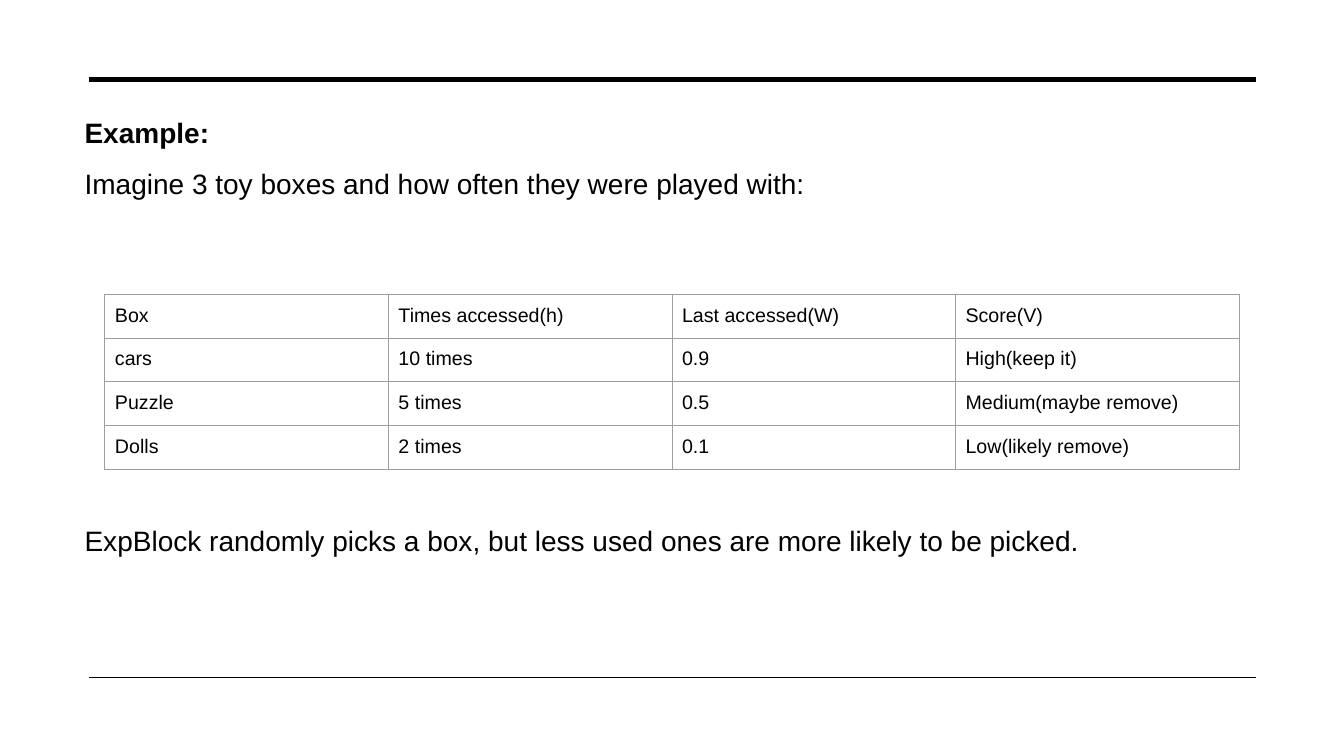
from lxml.etree import SubElement
from pptx import Presentation
from pptx.dml.color import RGBColor
from pptx.enum.shapes import MSO_CONNECTOR
from pptx.enum.text import MSO_ANCHOR
from pptx.oxml.ns import qn
from pptx.util import Inches, Pt


class ExampleSlide:
    COLORS = {"ink": "000000", "grid": "9E9E9E"}
    FONT = "Arial"

    def __init__(self, presentation):
        self.slide = presentation.slides.add_slide(presentation.slide_layouts[6])

    def color(self, name):
        return RGBColor.from_string(self.COLORS[name])

    def styled_run(self, paragraph, text, size, bold=False):
        run = paragraph.add_run()
        run.text = text
        run.font.name = self.FONT
        run.font.size = Pt(size)
        run.font.bold = bold
        run.font.color.rgb = self.color("ink")

    def rule(self, left, right, y, weight):
        line = self.slide.shapes.add_connector(
            MSO_CONNECTOR.STRAIGHT, Inches(left), Inches(y), Inches(right), Inches(y))
        line.line.color.rgb = self.color("ink")
        line.line.width = Pt(weight)
        SubElement(line._element.spPr, qn("a:effectLst"))

    def text(self, left, top, width, height, lines):
        frame = self.slide.shapes.add_textbox(
            Inches(left), Inches(top), Inches(width), Inches(height)).text_frame
        frame.word_wrap = True
        for index, (wording, bold) in enumerate(lines):
            paragraph = frame.add_paragraph() if index else frame.paragraphs[0]
            paragraph.line_spacing = 1.1
            paragraph.space_before = Pt(10)
            self.styled_run(paragraph, wording, 20, bold)

    def border(self, cell):
        properties = cell._tc.get_or_add_tcPr()
        for position, side in enumerate(("a:lnL", "a:lnR", "a:lnT", "a:lnB")):
            edge = properties.makeelement(qn(side), {"w": str(Pt(0.75))})
            fill = SubElement(edge, qn("a:solidFill"))
            SubElement(fill, qn("a:srgbClr"), val=self.COLORS["grid"])
            properties.insert(position, edge)

    def table(self, left, top, width, row_height, rows):
        columns = len(rows[0])
        table = self.slide.shapes.add_table(
            len(rows), columns, Inches(left), Inches(top),
            Inches(width), Inches(row_height * len(rows))).table
        table.first_row = False
        table.horz_banding = False
        for column in table.columns:
            column.width = Inches(width / columns)
        for row, values in zip(table.rows, rows):
            row.height = Inches(row_height)
            for cell, value in zip(row.cells, values):
                cell.margin_left = cell.margin_right = Inches(0.1)
                cell.margin_top = cell.margin_bottom = Inches(0.1)
                cell.vertical_anchor = MSO_ANCHOR.TOP
                cell.fill.background()
                self.border(cell)
                self.styled_run(cell.text_frame.paragraphs[0], value, 14)


def main():
    presentation = Presentation()
    presentation.slide_width = Inches(13.33)
    presentation.slide_height = Inches(7.5)
    example = ExampleSlide(presentation)

    example.rule(0.88, 12.46, 0.79, 3.5)
    example.rule(0.88, 12.46, 6.72, 1)
    example.text(0.74, 1.06, 11.69, 1.1, [
        ("Example:", True),
        ("Imagine 3 toy boxes and how often they were played with:", False),
    ])
    example.table(1.04, 2.92, 11.25, 0.42, [
        ("Box", "Times accessed(h)", "Last accessed(W)", "Score(V)"),
        ("cars", "10 times", "0.9", "High(keep it)"),
        ("Puzzle", "5 times", "0.5", "Medium(maybe remove)"),
        ("Dolls", "2 times", "0.1", "Low(likely remove)"),
    ])
    example.text(0.74, 5.11, 11.69, 0.6, [
        ("ExpBlock randomly picks a box, but less used ones are more likely to be picked.", False),
    ])
    presentation.save("out.pptx")


if __name__ == "__main__":
    main()
